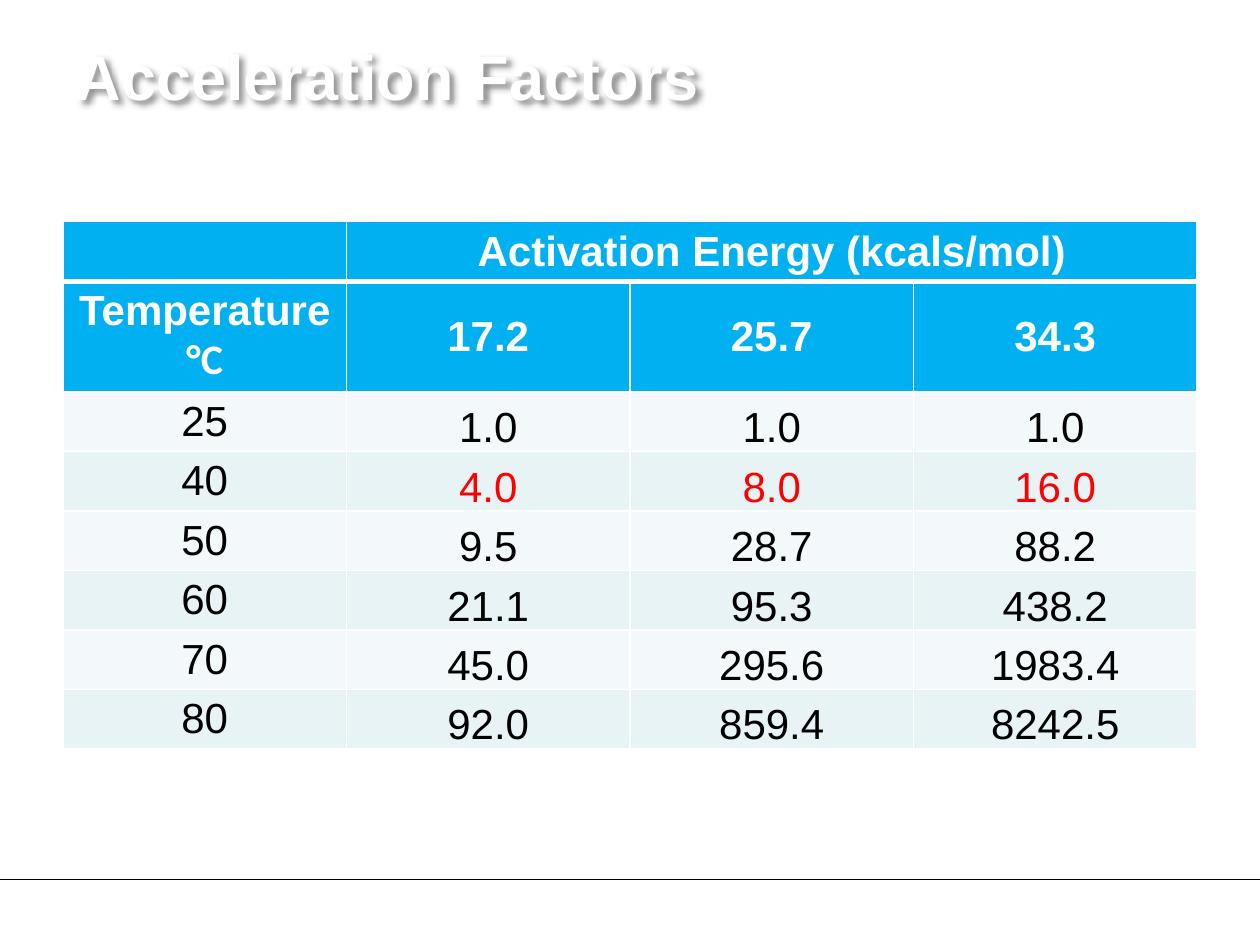
from lxml import etree
from pptx import Presentation
from pptx import util as u
from pptx.dml.color import RGBColor
from pptx.enum import shapes, text
from pptx.oxml import ns

HUES = {"white": "FFFFFF", "black": "000000", "red": "FF0000",
        "head": "00B0F0", "odd": "F3F9FA", "even": "E7F3F4"}
HEADS = ["17.2", "25.7", "34.3"]
FACTORS = [
    ("25", "1.0", "1.0", "1.0"),
    ("40", "4.0", "8.0", "16.0"),
    ("50", "9.5", "28.7", "88.2"),
    ("60", "21.1", "95.3", "438.2"),
    ("70", "45.0", "295.6", "1983.4"),
    ("80", "92.0", "859.4", "8242.5"),
]


def rgb(hue):
    """Return the colour of a named hue."""
    return RGBColor.from_string(HUES[hue])


def add_run(para, words, size, hue, bold=False, face="Arial"):
    """Add one formatted run to a paragraph."""
    run = para.add_run()
    run.text = words
    font = run.font
    font.size, font.bold, font.name = u.Pt(size), bold, face
    font.color.rgb = rgb(hue)


def shade(shape):
    """Give the text of an unfilled shape a soft shadow."""
    shape.fill.background()
    shape._element.spPr.append(etree.fromstring(
        f'<a:effectLst {ns.nsdecls("a")}>'
        '<a:outerShdw blurRad="38100" dist="38100" dir="2700000" algn="tl">'
        f'<a:srgbClr val="{HUES["black"]}"><a:alpha val="43000"/></a:srgbClr>'
        '</a:outerShdw></a:effectLst>'))


def edge(cell, base=1):
    """Draw white borders round a cell, with the base width in points."""
    props = cell._tc.get_or_add_tcPr()
    sides = {"lnL": 1, "lnR": 1, "lnT": 1, "lnB": base}
    for spot, (side, wide) in enumerate(sides.items()):
        props.insert(spot, etree.fromstring(
            f'<a:{side} {ns.nsdecls("a")} w="{u.Pt(wide)}"><a:solidFill>'
            f'<a:srgbClr val="{HUES["white"]}"/></a:solidFill></a:{side}>'))


def fill_cell(cell, hue, runs=(), anchor=text.MSO_ANCHOR.TOP):
    """Fill a cell and write its centred runs."""
    cell.fill.solid()
    cell.fill.fore_color.rgb = rgb(hue)
    cell.vertical_anchor = anchor
    para = cell.text_frame.paragraphs[0]
    para.alignment = text.PP_ALIGN.CENTER
    for run in runs:
        add_run(para, *run)


def add_title(slide, left, top, width, height):
    """Place the shadowed title in its box."""
    title = slide.shapes.title
    title.left, title.top, title.width, title.height = left, top, width, height
    shade(title)
    frame = title.text_frame
    frame.vertical_anchor = text.MSO_ANCHOR.MIDDLE
    para = frame.paragraphs[0]
    para.alignment = text.PP_ALIGN.LEFT
    add_run(para, "Acceleration Factors", 36, "white", True)


def add_rule(slide, left, top, width):
    """Draw the thin footer line."""
    rule = slide.shapes.add_connector(
        shapes.MSO_CONNECTOR.STRAIGHT, left, top, left + width, top)
    rule.line.color.rgb = rgb("black")
    rule.line.width = u.Pt(0.5)
    etree.SubElement(rule._element.spPr, ns.qn("a:effectLst"))


def add_grid(slide, left, top, width, height):
    """Build the table of factors by temperature and energy."""
    count = len(FACTORS) + 2
    grid = slide.shapes.add_table(
        count, len(HEADS) + 1, left, top, width, height).table
    for row in range(count):
        for cell in grid.rows[row].cells:
            edge(cell, 1 if row else 3)

    grid.cell(0, 1).merge(grid.cell(0, len(HEADS)))
    fill_cell(grid.cell(0, 0), "head")
    fill_cell(grid.cell(0, 1), "head",
              [("Activation Energy (kcals/mol)", 24, "white", True)])
    fill_cell(grid.cell(1, 0), "head",
              [("Temperature ", 24, "white", True),
               ("°C", 24, "white", True, "Calibri")])
    for col, head in enumerate(HEADS, 1):
        fill_cell(grid.cell(1, col), "head", [(head, 24, "white", True)],
                  text.MSO_ANCHOR.MIDDLE)

    for row, (temp, *rates) in enumerate(FACTORS, 2):
        band = "even" if row % 2 else "odd"
        hue = "red" if temp == "40" else "black"
        fill_cell(grid.cell(row, 0), band, [(temp, 24, "black")])
        for col, rate in enumerate(rates, 1):
            cell = grid.cell(row, col)
            fill_cell(cell, band, [(rate, 24, hue)], text.MSO_ANCHOR.BOTTOM)
            cell.margin_left = cell.margin_right = u.Inches(0.01)
            cell.margin_top, cell.margin_bottom = u.Inches(0.01), 0


def main():
    """Build and save the slide."""
    deck = Presentation()
    deck.slide_width, deck.slide_height = u.Inches(10), u.Inches(7.5)
    slide = deck.slides.add_slide(deck.slide_layouts[5])
    add_rule(slide, 0, u.Inches(6.98), deck.slide_width)
    add_title(slide, u.Inches(0.5), u.Inches(-0.03), u.Inches(9), u.Inches(1.25))
    add_grid(slide, u.Inches(0.5), u.Inches(1.76), u.Inches(9), u.Inches(3.28))
    deck.save("out.pptx")


if __name__ == "__main__":
    main()
